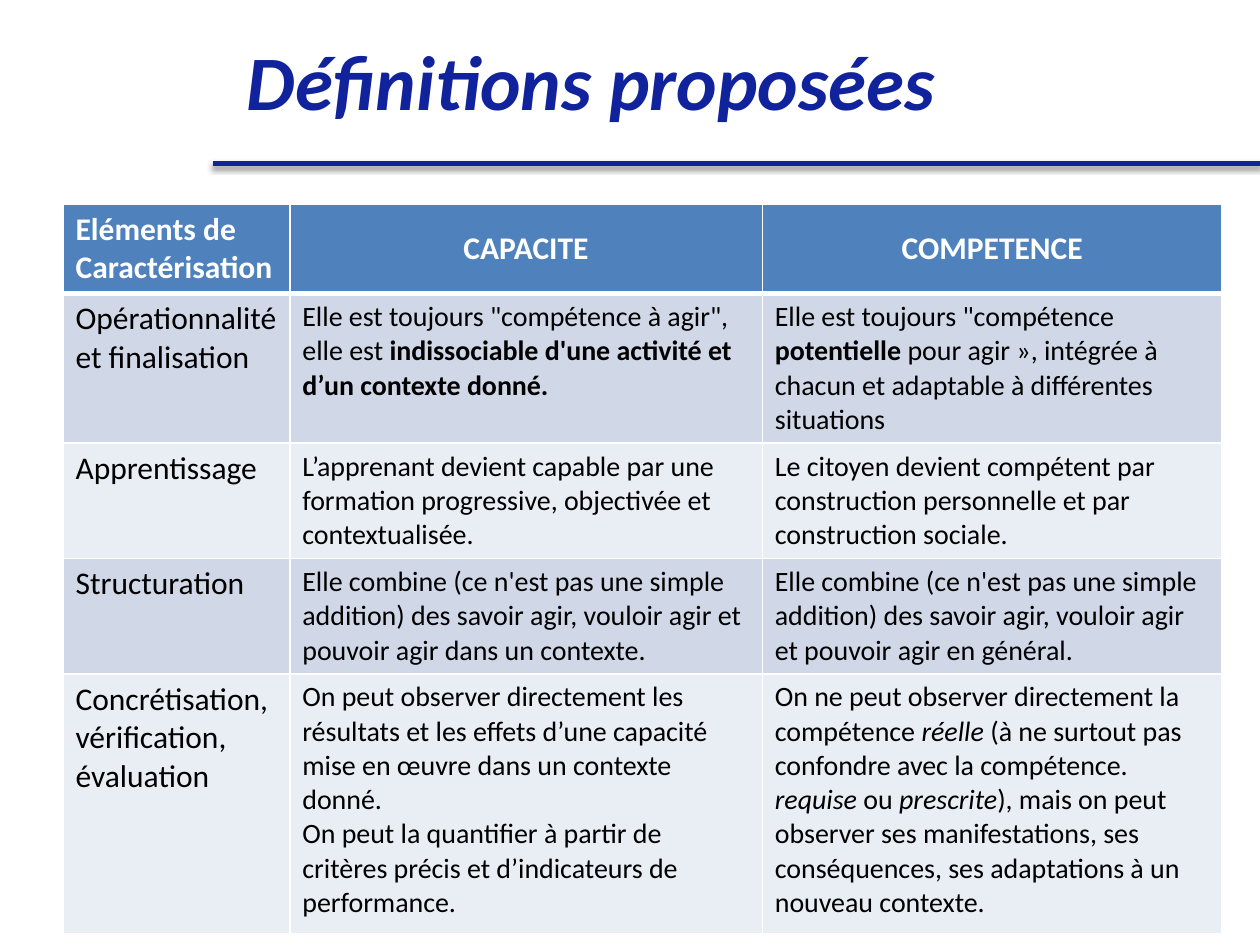
from lxml.etree import SubElement
from pptx import Presentation
from pptx.dml.color import RGBColor
from pptx.enum.shapes import MSO_CONNECTOR as Connector
from pptx.enum.text import MSO_ANCHOR as Anchor, PP_ALIGN as Align
from pptx.oxml import parse_xml
from pptx.oxml.ns import nsdecls, qn
from pptx.util import Inches, Pt

NAVY = RGBColor(0x11, 0x22, 0x9D)
BLUE = RGBColor(0x4F, 0x81, 0xBD)
BAND_DARK = RGBColor(0xD0, 0xD8, 0xE8)
BAND_LIGHT = RGBColor(0xE9, 0xED, 0xF4)
WHITE = RGBColor(0xFF, 0xFF, 0xFF)
BLACK = RGBColor(0x00, 0x00, 0x00)

BOLD = {"bold": True}
ITALIC = {"italic": True}

COLUMN_WIDTHS = [1.8, 3.75, 3.65]
ROW_HEIGHTS = [0.71, 0.81, 0.81, 0.81, 2.06]

HEADINGS = ["Eléments de Caractérisation", "CAPACITE", "COMPETENCE"]
CRITERIA = [
    [
        "Opérationnalité et finalisation",
        [[
            'Elle est toujours "compétence à agir", elle est ',
            ("indissociable d'une activité et d’un contexte donné.", BOLD),
        ]],
        [[
            'Elle est toujours "compétence ',
            ("potentielle ", BOLD),
            "pour agir », intégrée à chacun et adaptable à différentes situations",
        ]],
    ],
    [
        "Apprentissage",
        "L’apprenant devient capable par une formation progressive, objectivée et contextualisée.",
        "Le citoyen devient compétent par construction personnelle et par construction sociale.",
    ],
    [
        "Structuration",
        "Elle combine (ce n'est pas une simple addition) des savoir agir, "
        "vouloir agir et pouvoir agir dans un contexte.",
        "Elle combine (ce n'est pas une simple addition) des savoir agir, "
        "vouloir agir et pouvoir agir en général.",
    ],
    [
        "Concrétisation, vérification, évaluation",
        [
            ["On peut observer directement les résultats et les effets "
             "d’une capacité mise en œuvre dans un contexte donné."],
            ["On peut la quantifier à partir de critères précis et "
             "d’indicateurs de performance."],
        ],
        [[
            "On ne peut observer directement la compétence ",
            ("réelle", ITALIC),
            " (à ne surtout pas confondre avec la compétence. ",
            ("requise", ITALIC),
            " ou ",
            ("prescrite", ITALIC),
            "), mais on peut observer ses manifestations, ses conséquences, "
            "ses adaptations à un nouveau contexte.",
        ]],
    ],
]


def write_text(frame, content, *, font, size, color, bold=False, italic=False, align=Align.LEFT):
    paragraphs = [[content]] if isinstance(content, str) else content
    for index, pieces in enumerate(paragraphs):
        paragraph = frame.add_paragraph() if index else frame.paragraphs[0]
        paragraph.alignment = align
        for piece in pieces:
            words, emphasis = (piece, {}) if isinstance(piece, str) else piece
            run = paragraph.add_run()
            run.text = words
            run.font.name = font
            run.font.size = Pt(size)
            run.font.color.rgb = color
            run.font.bold = emphasis.get("bold", bold)
            run.font.italic = emphasis.get("italic", italic)


class SlideBuilder:
    font = "Calibri"

    def __init__(self, slide):
        self.slide = slide

    def title(self, words, left, top, width, height):
        heading = self.slide.shapes.title
        heading.left, heading.top = Inches(left), Inches(top)
        heading.width, heading.height = Inches(width), Inches(height)
        heading.text_frame.vertical_anchor = Anchor.MIDDLE
        write_text(heading.text_frame, words, font=self.font, size=44,
                   color=NAVY, bold=True, italic=True)

    def rule(self, start, end, y):
        underline = self.slide.shapes.add_connector(
            Connector.STRAIGHT, Inches(start), Inches(y), Inches(end), Inches(y))
        underline.line.color.rgb = NAVY
        underline.line.width = Pt(3)
        underline._element.spPr.append(parse_xml(
            f'<a:effectLst {nsdecls("a")}>'
            f'<a:outerShdw blurRad="{Pt(3.1)}" dist="{Pt(1.6)}" dir="5400000" rotWithShape="0">'
            '<a:srgbClr val="000000"><a:alpha val="38000"/></a:srgbClr>'
            '</a:outerShdw></a:effectLst>'))

    def borders(self, cell, **widths):
        properties = cell._tc.get_or_add_tcPr()
        for side in "LRTB":
            edge = SubElement(properties, qn(f"a:ln{side}"), w=str(Pt(widths.get(side, 1))))
            fill = SubElement(edge, qn("a:solidFill"))
            SubElement(fill, qn("a:srgbClr"), val=str(WHITE))

    def cell(self, cell, content, fill, edges, **text_format):
        self.borders(cell, **edges)
        cell.fill.solid()
        cell.fill.fore_color.rgb = fill
        write_text(cell.text_frame, content, font=self.font, **text_format)

    def table(self, left, top):
        grid = self.slide.shapes.add_table(
            len(ROW_HEIGHTS), len(COLUMN_WIDTHS), Inches(left), Inches(top),
            Inches(sum(COLUMN_WIDTHS)), Inches(sum(ROW_HEIGHTS))).table
        for column, width in zip(grid.columns, COLUMN_WIDTHS):
            column.width = Inches(width)
        for row, height in zip(grid.rows, ROW_HEIGHTS):
            row.height = Inches(height)

        for column, heading in enumerate(HEADINGS):
            header = grid.cell(0, column)
            if column:
                header.vertical_anchor = Anchor.MIDDLE
            self.cell(header, heading, BLUE, {"B": 3}, size=18, color=WHITE, bold=True,
                      align=Align.CENTER if column else Align.LEFT)

        for row, criterion in enumerate(CRITERIA, start=1):
            band = BAND_DARK if row % 2 else BAND_LIGHT
            edges = {"T": 3} if row == 1 else {}
            for column, content in enumerate(criterion):
                self.cell(grid.cell(row, column), content, band, edges,
                          size=16 if column else 18, color=BLACK)


def main():
    deck = Presentation()
    deck.slide_width, deck.slide_height = Inches(10), Inches(7.5)
    builder = SlideBuilder(deck.slides.add_slide(deck.slide_layouts[5]))
    builder.rule(1.69, 10, 1.3)
    builder.title("Définitions proposées", 1.86, 0.01, 7.64, 1.25)
    builder.table(0.5, 1.62)
    deck.save("out.pptx")


if __name__ == "__main__":
    main()
